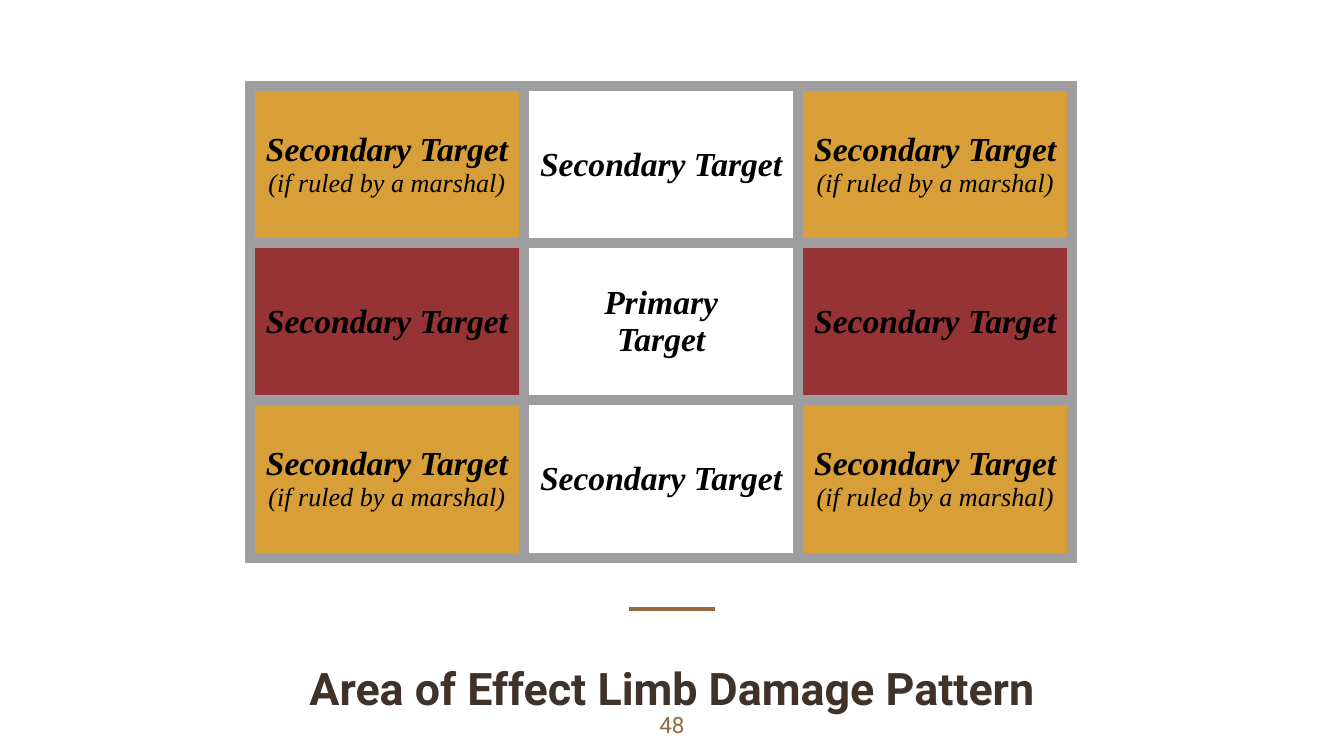
import pptx
import pptx.dml.color
import pptx.enum.shapes
import pptx.enum.text
import pptx.oxml
import pptx.oxml.ns
import pptx.util
from lxml import etree

WIDTH = 10
HEIGHT = WIDTH * 9 / 16
COLUMN, ROW = 2.04, 1.17
GRID_LEFT, GRID_TOP = 1.86, 0.64
INSET = 0.1

GOLD, RED, GREY = "D89F39", "963334", "9E9E9E"
BROWN, DARK_BROWN, BLACK = "926940", "403228", "000000"

SECONDARY = ["Secondary Target"]
BY_RULING = SECONDARY + ["(if ruled by a marshal)"]
PRIMARY = ["Primary", "Target"]
OUTER_ROW = [(BY_RULING, GOLD), (SECONDARY, None), (BY_RULING, GOLD)]
MIDDLE_ROW = [(SECONDARY, RED), (PRIMARY, None), (SECONDARY, RED)]
PATTERN = [OUTER_ROW, MIDDLE_ROW, OUTER_ROW]


def inches(value):
    return pptx.util.Inches(value)


def color(hex_value):
    return pptx.dml.color.RGBColor.from_string(hex_value)


def style_paragraph(paragraph, font_name, size, hex_value, bold=False, italic=False):
    paragraph.alignment = pptx.enum.text.PP_ALIGN.CENTER
    for run in paragraph.runs:
        run.font.name = font_name
        run.font.size = pptx.util.Pt(size)
        run.font.color.rgb = color(hex_value)
        run.font.bold = bold
        run.font.italic = italic


def set_insets(holder):
    """Give a cell or text frame the same margin on every side."""
    holder.margin_left = holder.margin_right = inches(INSET)
    holder.margin_top = holder.margin_bottom = inches(INSET)


def add_borders(cell, hex_value, points):
    properties = cell._tc.get_or_add_tcPr()
    namespace = pptx.oxml.ns.nsdecls("a")
    for position, side in enumerate(("lnL", "lnR", "lnT", "lnB")):
        border = pptx.oxml.parse_xml(
            f'<a:{side} {namespace} w="{pptx.util.Pt(points)}"><a:solidFill>'
            f'<a:srgbClr val="{hex_value}"/></a:solidFill></a:{side}>')
        properties.insert(position, border)


def fill_cell(cell, lines, background):
    set_insets(cell)
    cell.vertical_anchor = pptx.enum.text.MSO_ANCHOR.MIDDLE
    if background:
        cell.fill.solid()
        cell.fill.fore_color.rgb = color(background)
    else:
        cell.fill.background()
    add_borders(cell, GREY, 6)
    cell.text_frame.text = "\n".join(lines)
    for line in cell.text_frame.paragraphs:
        is_note = line.text.startswith("(")
        style_paragraph(line, "Times New Roman", 14 if is_note else 18, BLACK,
                        bold=not is_note, italic=True)


def add_damage_grid(slide):
    row_count, column_count = len(PATTERN), len(PATTERN[0])
    grid = slide.shapes.add_table(
        row_count, column_count, inches(GRID_LEFT), inches(GRID_TOP),
        inches(column_count * COLUMN), inches(row_count * ROW)).table
    grid.first_row = grid.horz_banding = False
    for column in grid.columns:
        column.width = inches(COLUMN)
    for row, targets in zip(grid.rows, PATTERN):
        row.height = inches(ROW)
        for cell, (lines, background) in zip(row.cells, targets):
            fill_cell(cell, lines, background)


def add_centered_rule(slide, top, width):
    left = (WIDTH - width) / 2
    rule = slide.shapes.add_connector(
        pptx.enum.shapes.MSO_CONNECTOR.STRAIGHT,
        inches(left), inches(top), inches(left + width), inches(top))
    rule.line.color.rgb = color(BROWN)
    rule.line.width = pptx.util.Pt(2.25)
    etree.SubElement(rule._element.spPr, pptx.oxml.ns.qn("a:effectLst"))


def add_centered_text(slide, text, top, width, height, size, hex_value, bold=False):
    box = slide.shapes.add_textbox(inches((WIDTH - width) / 2), inches(top),
                                   inches(width), inches(height))
    frame = box.text_frame
    frame.word_wrap = True
    set_insets(frame)
    frame.text = text
    style_paragraph(frame.paragraphs[0], "Roboto", size, hex_value, bold)


def main():
    deck = pptx.Presentation()
    deck.slide_width, deck.slide_height = inches(WIDTH), inches(HEIGHT)
    slide = deck.slides.add_slide(deck.slide_layouts[6])
    add_centered_rule(slide, top=4.53, width=0.64)
    add_damage_grid(slide)
    add_centered_text(slide, "Area of Effect Limb Damage Pattern",
                      4.82, 0.9 * WIDTH, 0.57, 24, DARK_BROWN, bold=True)
    add_centered_text(slide, "48", HEIGHT - 0.43, 0.06 * WIDTH, 0.43, 12, BROWN)
    deck.save("out.pptx")


if __name__ == "__main__":
    main()
